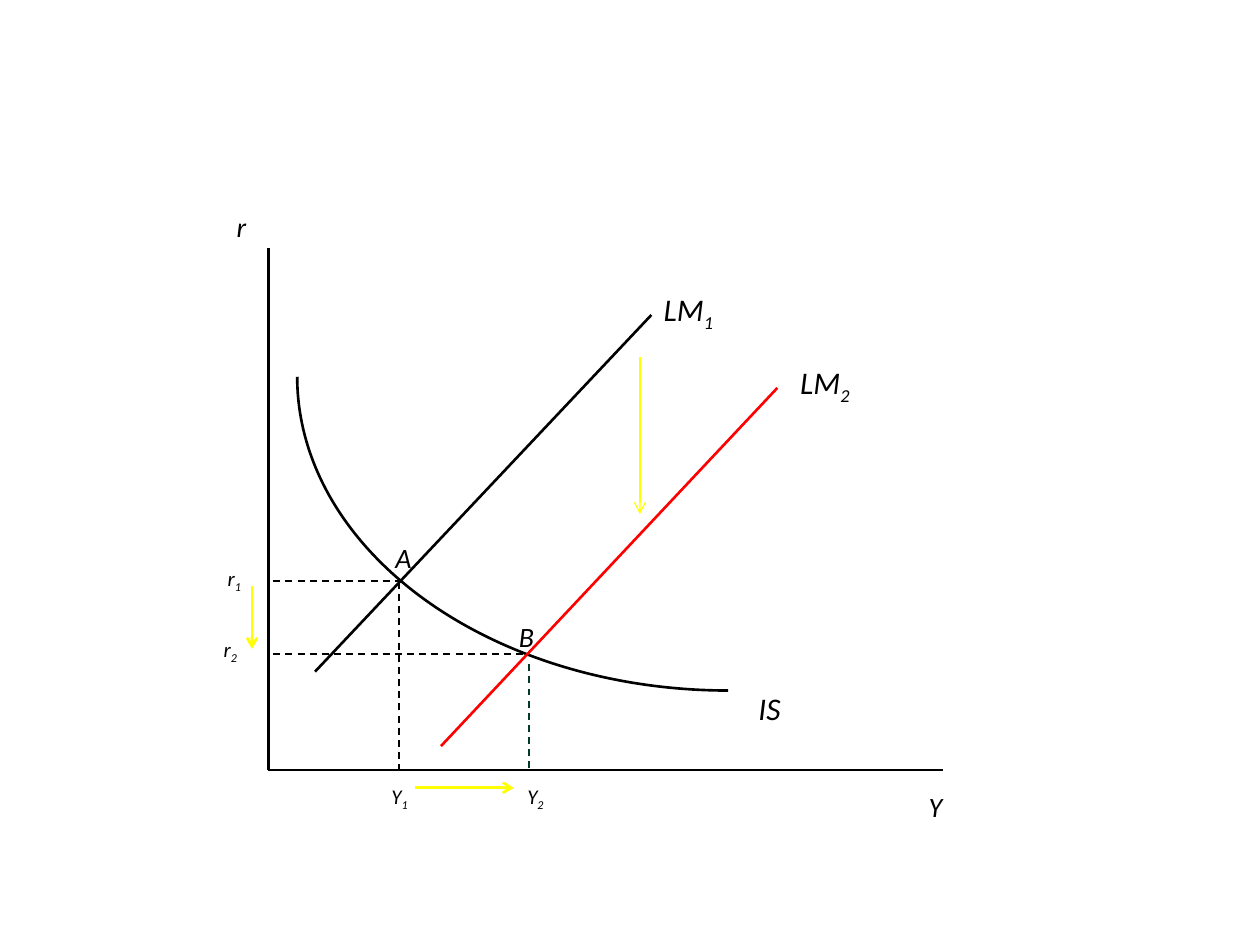
from lxml.etree import SubElement
from pptx import Presentation
from pptx.dml.color import RGBColor
from pptx.enum.dml import MSO_LINE
from pptx.enum.shapes import MSO_CONNECTOR, MSO_SHAPE
from pptx.enum.text import MSO_AUTO_SIZE, PP_ALIGN
from pptx.oxml.ns import qn
from pptx.util import Cm, Pt

BLACK = RGBColor(0x00, 0x00, 0x00)
RED = RGBColor(0xFF, 0x00, 0x00)
YELLOW = RGBColor(0xFF, 0xFF, 0x00)
GREEN = RGBColor(0x02, 0x3A, 0x2B)

FONT = "Calibri"
ORIGIN_X, ORIGIN_Y = 5.41, 15.52
HEIGHTS = {18: 1.02, 16: 0.94, 12: 0.76}  # label height in cm by text size


def add_line(slide, start, end, color=BLACK, width=1.5, dashed=False, arrow=False):
    line = slide.shapes.add_connector(
        MSO_CONNECTOR.STRAIGHT, *(Cm(value) for value in (*start, *end)))
    line.line.color.rgb = color
    line.line.width = Pt(width)
    if dashed:
        line.line.dash_style = MSO_LINE.DASH
    if arrow:
        SubElement(line.line._get_or_add_ln(), qn("a:tailEnd"), type="arrow")
    SubElement(line._element.spPr, qn("a:effectLst"))


def add_curve(slide, left, top, width, height):
    curve = slide.shapes.add_shape(
        MSO_SHAPE.ARC, Cm(left), Cm(top), Cm(width), Cm(height))
    curve.rotation = 180
    curve.shadow.inherit = False
    curve.fill.background()
    curve.line.color.rgb = BLACK
    curve.line.width = Pt(1.5)


def add_label(slide, text, left, top, width, size, subscript="", align=PP_ALIGN.LEFT):
    box = slide.shapes.add_textbox(Cm(left), Cm(top), Cm(width), Cm(HEIGHTS[size]))
    frame = box.text_frame
    frame.word_wrap = True
    frame.auto_size = MSO_AUTO_SIZE.SHAPE_TO_FIT_TEXT
    para = frame.paragraphs[0]
    para.text = text
    para.alignment = align
    if subscript:
        span = para.add_run()
        span.text = subscript
        span.font._element.set("baseline", "-25000")
    for span in para.runs:
        span.font.name = FONT
        span.font.size = Pt(size)
        span.font.italic = True
        span.font.color.rgb = BLACK


def add_tick_label(slide, text, subscript, left, top):
    add_label(slide, text, left, top, 1.27, 12, subscript, PP_ALIGN.CENTER)


def main():
    deck = Presentation()
    deck.slide_width, deck.slide_height = Cm(25.4), Cm(19.05)
    slide = deck.slides.add_slide(deck.slide_layouts[6])

    # Axes
    add_line(slide, (ORIGIN_X, 5), (ORIGIN_X, ORIGIN_Y))
    add_line(slide, (ORIGIN_X, ORIGIN_Y), (19, ORIGIN_Y))
    add_label(slide, "r", 4.52, 4.09, 1.47, 16)
    add_label(slide, "Y", 18.47, 15.8, 2.06, 16)

    # IS curve
    add_curve(slide, 5.99, 1.27, 17.37, 12.65)
    add_label(slide, "IS", 15.04, 13.77, 1.7, 18)

    # Guides from the equilibria to the axes
    add_line(slide, (10.67, 13.39), (10.67, 15.49), GREEN, 1, dashed=True)
    add_line(slide, (8.05, 11.73), (8.05, 15.54), width=1, dashed=True)
    add_line(slide, (5.51, 11.71), (8.05, 11.71), width=1, dashed=True)
    add_line(slide, (5.51, 13.18), (10.59, 13.18), width=1, dashed=True)

    # LM lines
    add_line(slide, (6.35, 13.54), (13.13, 6.35))
    add_line(slide, (8.89, 15.04), (15.67, 7.82), RED)
    add_label(slide, "LM", 13.13, 5.72, 1.65, 18, "1")
    add_label(slide, "LM", 15.88, 7.19, 1.65, 18, "2")

    # Axis values
    add_tick_label(slide, "Y", "1", 7.42, 15.67)
    add_tick_label(slide, "Y", "2", 10.16, 15.67)
    add_tick_label(slide, "r", "1", 4.09, 11.28)
    add_tick_label(slide, "r", "2", 4.01, 12.7)

    # Equilibrium points
    add_label(slide, "A", 7.72, 10.77, 1.22, 16)
    add_label(slide, "B", 10.21, 12.37, 1.07, 16)

    # Arrows showing the shifts
    add_line(slide, (5.08, 11.81), (5.08, 13.08), YELLOW, arrow=True)
    add_line(slide, (8.36, 15.88), (10.36, 15.88), YELLOW, arrow=True)
    add_line(slide, (12.9, 7.19), (12.9, 10.36), YELLOW, 0.75, arrow=True)

    deck.save("out.pptx")


if __name__ == "__main__":
    main()
